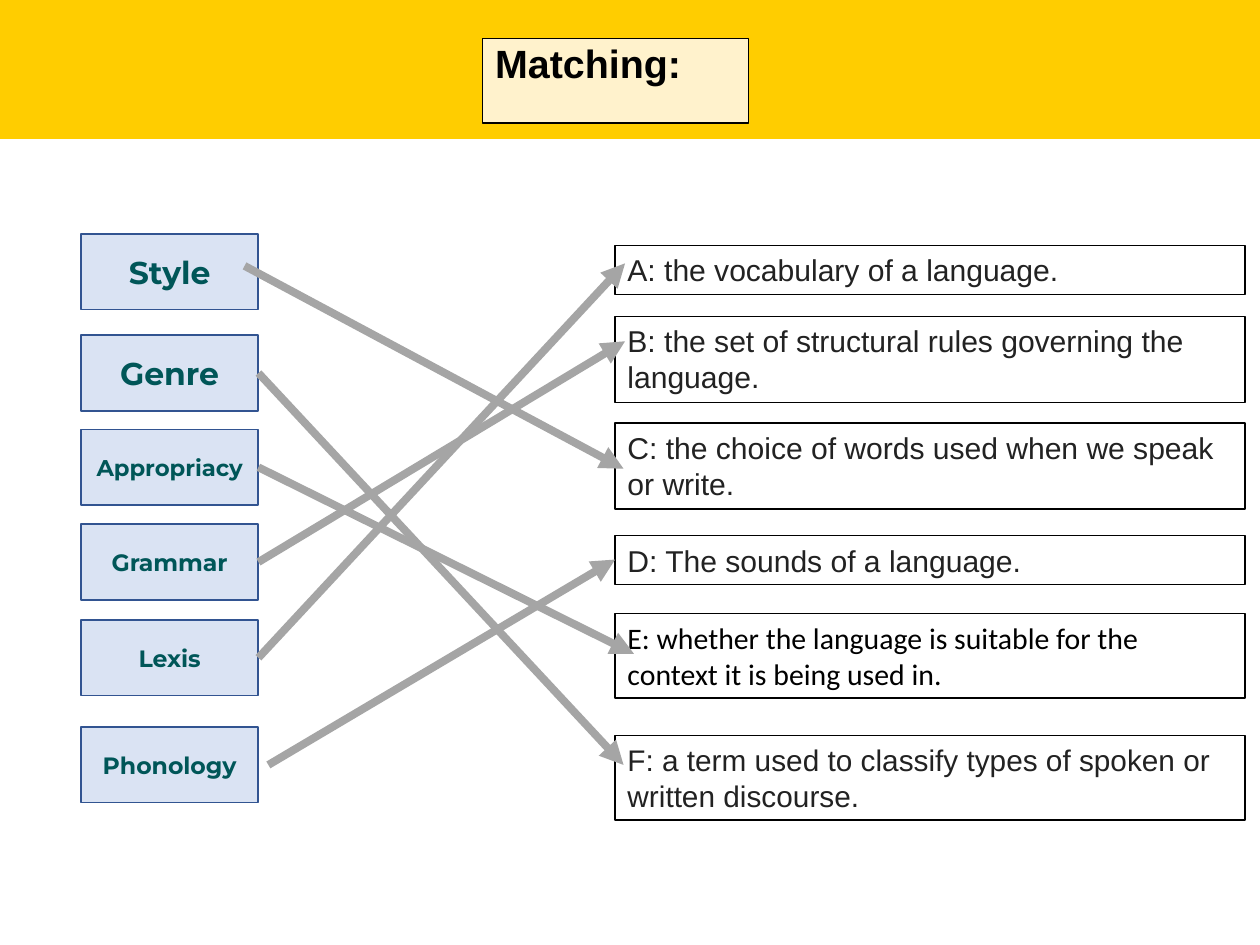
from dataclasses import dataclass

from lxml import etree
from pptx import Presentation
from pptx.dml.color import RGBColor
from pptx.enum.shapes import MSO_CONNECTOR, MSO_SHAPE
from pptx.enum.text import MSO_ANCHOR, MSO_AUTO_SIZE, PP_ALIGN
from pptx.oxml.ns import qn
from pptx.util import Cm, Pt

RECTANGLE = MSO_SHAPE.RECTANGLE
STRAIGHT = MSO_CONNECTOR.STRAIGHT
TOP, MIDDLE = MSO_ANCHOR.TOP, MSO_ANCHOR.MIDDLE
LEFT, CENTER = PP_ALIGN.LEFT, PP_ALIGN.CENTER
NO_FIT, GROW = MSO_AUTO_SIZE.NONE, MSO_AUTO_SIZE.SHAPE_TO_FIT_TEXT

COLORS = {
    "banner": "FFCD00",
    "title_fill": "FFF2CC",
    "term_fill": "DAE3F3",
    "term_border": "325491",
    "term_text": "005658",
    "definition_text": "222222",
    "black": "000000",
    "arrow": "A5A5A5",
}

TERM_LEFT, TERM_WIDTH, TERM_HEIGHT = 1.63, 3.58, 1.52
DEFINITION_LEFT, DEFINITION_WIDTH = 12.4, 12.7


@dataclass
class Term:
    word: str
    top: float
    size: float
    arrow_start: tuple[float, float]
    arrow_end: tuple[float, float]


@dataclass
class Definition:
    wording: str
    top: float
    height: float
    size: float = 17.2
    font: str = "Arial"
    color: str = "definition_text"


TERMS = [
    Term("Style", 4.72, 18, (4.93, 5.36), (12.57, 9.45)),
    Term("Genre", 6.76, 18, (5.21, 7.52), (12.57, 15.42)),
    Term("Appropriacy", 8.66, 13, (5.21, 9.42), (12.78, 13.18)),
    Term("Grammar", 10.57, 13.5, (5.21, 11.33), (12.6, 6.88)),
    Term("Lexis", 12.5, 13.5, (5.21, 13.26), (12.6, 5.31)),
    Term("Phonology", 14.66, 13.5, (5.41, 15.42), (12.4, 11.28)),
]

DEFINITIONS = [
    Definition("A: the vocabulary of a language.", 4.95, 0.99),
    Definition("B: the set of structural rules governing the language.", 6.38, 1.73),
    Definition("C: the choice of words used when we speak or write.", 8.53, 1.73),
    Definition("D: The sounds of a language.", 10.8, 0.99),
    Definition("E: whether the language is suitable for the context it is being used in.",
               12.37, 1.7, 17, "Calibri", "black"),
    Definition("F: a term used to classify types of spoken or written discourse.",
               14.83, 1.7, 17),
]


def rgb(color: str) -> RGBColor:
    return RGBColor.from_string(COLORS[color])


def apply_format(target, values: dict) -> None:
    for attribute, value in values.items():
        setattr(target, attribute, value)


def add_box(slide, left: float, top: float, width: float, height: float,
            fill: str | None = None, border: str | None = None,
            border_width: float = 0.75):
    """Draw a rectangle, in centimetres, with optional fill and border."""
    box = slide.shapes.add_shape(RECTANGLE, Cm(left), Cm(top), Cm(width), Cm(height))
    box.shadow.inherit = False
    if fill:
        box.fill.solid()
        box.fill.fore_color.rgb = rgb(fill)
    else:
        box.fill.background()
    if border:
        box.line.color.rgb = rgb(border)
        box.line.width = Pt(border_width)
    else:
        box.line.fill.background()
    return box


def write_text(box, wording: str, font: str, size: float, color: str,
               frame_format: dict, paragraph_format: dict, bold: bool = False) -> None:
    apply_format(box.text_frame, {"word_wrap": True, **frame_format})
    paragraph = box.text_frame.paragraphs[0]
    paragraph.text = wording
    apply_format(paragraph, paragraph_format)
    apply_format(paragraph.font, {"name": font, "size": Pt(size), "bold": bold})
    paragraph.font.color.rgb = rgb(color)


def add_title(slide) -> None:
    title = add_box(slide, 9.73, 0.78, 5.36, 1.7, "title_fill", "black")
    write_text(title, "Matching:", "Arial", 22.5, "black",
               {"vertical_anchor": TOP, "auto_size": NO_FIT},
               {"alignment": LEFT, "line_spacing": 0.9}, bold=True)


def add_term(slide, term: Term) -> None:
    box = add_box(slide, TERM_LEFT, term.top, TERM_WIDTH, TERM_HEIGHT,
                  "term_fill", "term_border", 1)
    write_text(box, term.word, "Montserrat", term.size, "term_text",
               {"vertical_anchor": MIDDLE, "auto_size": NO_FIT},
               {"alignment": CENTER}, bold=True)


def add_definition(slide, definition: Definition) -> None:
    box = add_box(slide, DEFINITION_LEFT, definition.top, DEFINITION_WIDTH,
                  definition.height, border="black")
    write_text(box, definition.wording, definition.font, definition.size,
               definition.color, {"vertical_anchor": TOP, "auto_size": GROW},
               {"alignment": LEFT})


def add_arrow(slide, start: tuple[float, float], end: tuple[float, float]) -> None:
    ends = [Cm(value) for value in (*start, *end)]
    arrow = slide.shapes.add_connector(STRAIGHT, *ends)
    arrow.line.color.rgb = rgb("arrow")
    arrow.line.width = Pt(4.5)
    etree.SubElement(arrow.line._get_or_add_ln(), qn("a:tailEnd"), type="triangle")
    etree.SubElement(arrow._element.spPr, qn("a:effectLst"))


def main() -> None:
    presentation = Presentation()
    apply_format(presentation, {"slide_width": Cm(25.4), "slide_height": Cm(19.05)})
    slide = presentation.slides.add_slide(presentation.slide_layouts[6])

    add_box(slide, 0, 0, 25.4, 2.8, "banner")
    add_title(slide)
    for term in TERMS:
        add_term(slide, term)
    for definition in DEFINITIONS:
        add_definition(slide, definition)
    for term in TERMS:
        add_arrow(slide, term.arrow_start, term.arrow_end)

    presentation.save("out.pptx")


if __name__ == "__main__":
    main()
